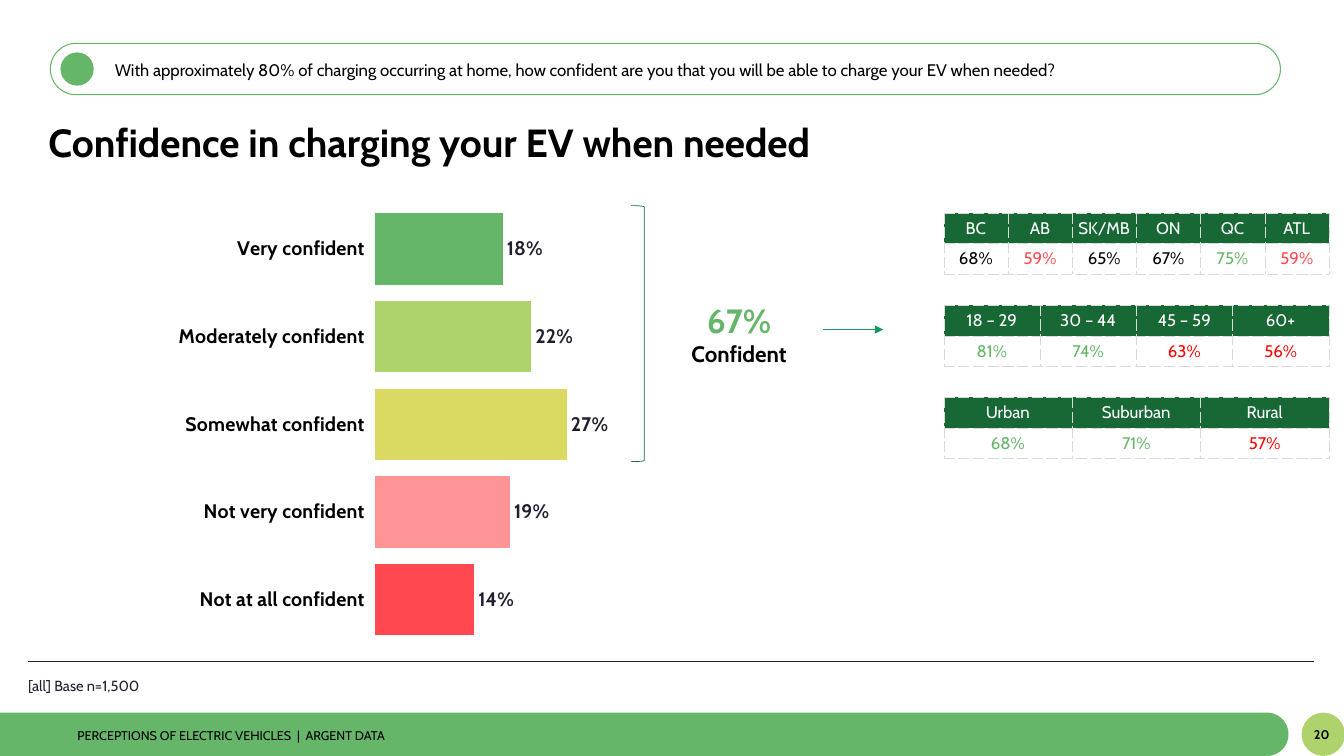
import math
import pptx
import pptx.chart.data
import pptx.dml.color
import pptx.enum.chart
import pptx.enum.shapes
import pptx.enum.text
import pptx.oxml
import pptx.oxml.ns
import pptx.util

COLORS = {
    "black": "000000", "white": "FFFFFF", "ink": "202036", "label": "201E30",
    "green": "65B668", "lime": "AED36D", "yellow": "DADA62", "pink": "FF9496",
    "red": "FF4850", "bright": "FF0000", "forest": "186836", "teal": "169964",
    "dash": "D9D9D9",
}
FONT = "Cabin"
SHAPE = pptx.enum.shapes.MSO_SHAPE
ALIGN = pptx.enum.text.PP_ALIGN
ANCHOR = pptx.enum.text.MSO_ANCHOR
DRAWING = 'xmlns:a="http://schemas.openxmlformats.org/drawingml/2006/main"'

deck = pptx.Presentation()
deck.slide_width = pptx.util.Inches(13.33)
deck.slide_height = pptx.util.Inches(7.5)
page = deck.slides.add_slide(deck.slide_layouts[5])
cell_size = deck.slide_height / 75


def grid(*cells):
    return [pptx.util.Emu(round(count * cell_size)) for count in cells]


def style(font, size, color, bold=False):
    font.name = FONT
    font.size = pptx.util.Pt(size)
    font.bold = bold
    font.color.rgb = pptx.dml.color.RGBColor.from_string(COLORS[color])


bar_top, bar_height, bar_right = 70.7, 4.3, 127.8
radius = bar_height / 2
arc = []
for step in range(25):
    angle = math.pi * (step / 24 - 0.5)
    arc.append(grid(bar_right - radius + radius * math.cos(angle),
                    bar_top + radius + radius * math.sin(angle)))
outline = page.shapes.build_freeform(*grid(0, bar_top))
outline.add_line_segments(arc + [grid(0, 75)], close=True)
footer_bar = outline.convert_to_shape()
footer_bar.shadow.inherit = False
footer_bar.fill.solid()
footer_bar.fill.fore_color.rgb = pptx.dml.color.RGBColor.from_string(COLORS["green"])
footer_bar.line.fill.background()

for kind, cells, fill, line, width in [
    (SHAPE.OVAL, (129.1, bar_top, bar_height, bar_height), "lime", None, 0),
    (SHAPE.ROUNDED_RECTANGLE, (5, 4.3, 122, 5.1), None, "green", 0.75),
    (SHAPE.OVAL, (6, 5.2, 3.3, 3.3), "green", None, 0),
    (SHAPE.RIGHT_BRACKET, (62.6, 20.4, 1.3, 25.4), None, "forest", 0.5),
]:
    shape = page.shapes.add_shape(kind, *grid(*cells))
    shape.shadow.inherit = False
    if kind == SHAPE.ROUNDED_RECTANGLE:
        shape.adjustments[0] = 0.5
    if fill:
        shape.fill.solid()
        shape.fill.fore_color.rgb = pptx.dml.color.RGBColor.from_string(COLORS[fill])
    else:
        shape.fill.background()
    if line:
        shape.line.color.rgb = pptx.dml.color.RGBColor.from_string(COLORS[line])
        shape.line.width = pptx.util.Pt(width)
    else:
        shape.line.fill.background()

for cells, color, width, arrow in [
    ((2.8, 65.6, 130.3, 65.6), "ink", 0.5, False),
    ((81.6, 32.7, 87.6, 32.7), "teal", 1, True),
]:
    connector = page.shapes.add_connector(
        pptx.enum.shapes.MSO_CONNECTOR.STRAIGHT, *grid(*cells))
    connector.line.color.rgb = pptx.dml.color.RGBColor.from_string(COLORS[color])
    connector.line.width = pptx.util.Pt(width)
    if arrow:
        connector.line._get_or_add_ln().append(
            pptx.oxml.parse_xml(f'<a:tailEnd {DRAWING} type="triangle"/>'))
    connector._element.spPr.append(pptx.oxml.parse_xml(f"<a:effectLst {DRAWING}/>"))

chart_data = pptx.chart.data.CategoryChartData(number_format="0%")
chart_data.categories = ["Very confident", "Moderately confident", "Somewhat confident",
                         "Not very confident", "Not at all confident"]
chart_data.add_series("Series 1", [0.18, 0.22, 0.27, 0.19, 0.14])
chart = page.shapes.add_chart(
    pptx.enum.chart.XL_CHART_TYPE.BAR_CLUSTERED,
    *grid(3.8, 18.8, 105.6, 46.6), chart_data).chart
chart.has_legend = False
chart.has_title = False
style(chart.font, 16, "black", True)
chart.category_axis.reverse_order = True
chart.category_axis.format.line.fill.background()
style(chart.category_axis.tick_labels.font, 14, "black", True)
chart.value_axis.minimum_scale = 0
chart.value_axis.maximum_scale = 1
chart.value_axis.has_major_gridlines = False
chart.value_axis.visible = False
bars = chart.plots[0]
bars.gap_width = 23
bars.vary_by_categories = False
bars.has_data_labels = True
labels = bars.data_labels
labels.show_value = True
labels.number_format = "0%"
labels.number_format_is_linked = False
labels.position = pptx.enum.chart.XL_LABEL_POSITION.OUTSIDE_END
style(labels.font, 14, "label", True)
for index, color in enumerate(["green", "lime", "yellow", "pink", "red"]):
    bar_fill = bars.series[0].points[index].format.fill
    bar_fill.solid()
    bar_fill.fore_color.rgb = pptx.dml.color.RGBColor.from_string(COLORS[color])
plot_area = chart._chartSpace.chart.plotArea
for old_layout in plot_area.findall(pptx.oxml.ns.qn("c:layout")):
    plot_area.remove(old_layout)
plot_area.insert(0, pptx.oxml.parse_xml(
    '<c:layout xmlns:c="http://schemas.openxmlformats.org/drawingml/2006/chart">'
    '<c:manualLayout><c:layoutTarget val="inner"/>'
    '<c:xMode val="edge"/><c:yMode val="edge"/><c:x val="0.316"/><c:y val="0.033"/>'
    '<c:w val="0.669"/><c:h val="0.934"/></c:manualLayout></c:layout>'))

title = page.shapes.title
for box, cells, anchor, align, spacing, lines in [
    (title, (3.8, 11.4, 122, 6), ANCHOR.MIDDLE, ALIGN.LEFT, 0.9,
     [("Confidence in charging your EV when needed", 28, "black", True)]),
    (None, (10.4, 5.4, 115.4, 3), ANCHOR.MIDDLE, ALIGN.LEFT, 1,
     [("With approximately 80% of charging occurring at home, how confident are you "
       "that you will be able to charge your EV when needed?", 12, "black", False)]),
    (None, (63.4, 29.3, 19.8, 7.7), ANCHOR.TOP, ALIGN.CENTER, 1,
     [("67%", 24, "green", True), ("Confident", 16, "black", True)]),
    (None, (1.8, 66.9, 105.6, 3.3), ANCHOR.TOP, ALIGN.LEFT, 0.9,
     [("[all] Base n=1,500", 10.5, "ink", False)]),
    (None, (6.7, 71.9, 95.7, 2.1), ANCHOR.TOP, ALIGN.LEFT, 0.9,
     [("PERCEPTIONS OF ELECTRIC VEHICLES  |  ARGENT DATA", 9, "black", False)]),
    (None, (128.3, 70.8, 5.6, 4.3), ANCHOR.MIDDLE, ALIGN.CENTER, 0.9,
     [("20", 9, "black", True)]),
]:
    if box is None:
        box = page.shapes.add_textbox(*grid(*cells))
    box.left, box.top, box.width, box.height = grid(*cells)
    frame = box.text_frame
    frame.word_wrap = True
    frame.auto_size = pptx.enum.text.MSO_AUTO_SIZE.NONE
    frame.vertical_anchor = anchor
    for index, (text, size, color, bold) in enumerate(lines):
        para = frame.add_paragraph() if index else frame.paragraphs[0]
        para.alignment = align
        para.line_spacing = spacing
        span = para.add_run()
        span.text = text
        style(span.font, size, color, bold)

table_width, row_height = 38.2, 3.05
for number, (headings, results) in enumerate([
    (["BC", "AB", "SK/MB", "ON", "QC", "ATL"],
     [("68%", "black"), ("59%", "red"), ("65%", "black"),
      ("67%", "black"), ("75%", "green"), ("59%", "red")]),
    (["18 – 29", "30 – 44", "45 – 59", "60+"],
     [("81%", "green"), ("74%", "green"), ("63%", "bright"), ("56%", "bright")]),
    (["Urban", "Suburban", "Rural"],
     [("68%", "green"), ("71%", "green"), ("57%", "bright")]),
]):
    table = page.shapes.add_table(2, len(headings), *grid(
        93.6, 21.1 + number * 3 * row_height, table_width, 2 * row_height)).table
    table.first_row = False
    table.horz_banding = False
    for column in table.columns:
        column.width = grid(table_width / len(headings))[0]
    for row, entries in enumerate([[(heading, "white") for heading in headings], results]):
        table.rows[row].height = grid(row_height)[0]
        for position, (text, color) in enumerate(entries):
            cell = table.cell(row, position)
            cell.margin_left = cell.margin_right = cell.margin_top = cell.margin_bottom = 0
            cell.vertical_anchor = ANCHOR.MIDDLE
            for side in "LRTB":
                cell._tc.get_or_add_tcPr().append(pptx.oxml.parse_xml(
                    f'<a:ln{side} {DRAWING} w="3175"><a:solidFill>'
                    f'<a:srgbClr val="{COLORS["dash"]}"/></a:solidFill>'
                    f'<a:prstDash val="lgDash"/></a:ln{side}>'))
            if row == 0:
                cell.fill.solid()
                cell.fill.fore_color.rgb = pptx.dml.color.RGBColor.from_string(COLORS["forest"])
            else:
                cell.fill.background()
            para = cell.text_frame.paragraphs[0]
            para.alignment = ALIGN.CENTER
            span = para.add_run()
            span.text = text
            style(span.font, 12, color)

deck.save("out.pptx")
